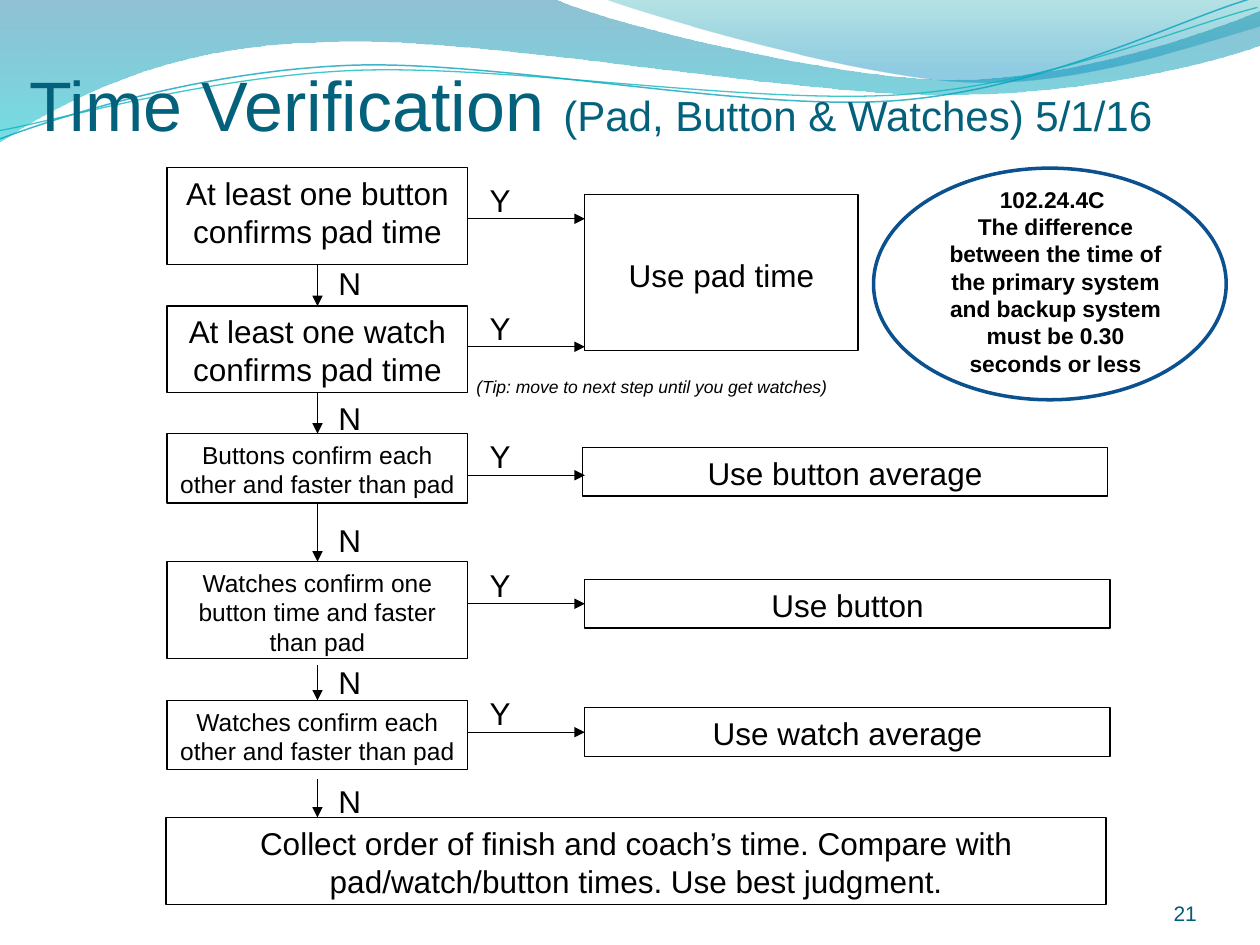
import pptx
import pptx.util
import pptx.dml.color
import pptx.enum.shapes
import pptx.enum.text
import pptx.oxml.ns
import lxml.etree

Cm = pptx.util.Cm
Pt = pptx.util.Pt
Shape = pptx.enum.shapes.MSO_SHAPE
Align = pptx.enum.text.PP_ALIGN
Anchor = pptx.enum.text.MSO_ANCHOR
qn = pptx.oxml.ns.qn

HUES = {
    "ink": "000000", "paper": "FFFFFF", "title": "04617B", "page": "045C75",
    "ring": "0B5190", "deep": "00739E", "aqua": "00C5CE", "teal": "009FA6",
    "sky": "008ABE", "blue": "05A0BE", "mint": "08B6BA",
}


def hue(name):
    return pptx.dml.color.RGBColor.from_string(HUES[name])


def write(frame, text, size=18, color="ink", bold=False, italic=False,
          align=Align.CENTER, anchor=Anchor.TOP, inset=0.13, wrap=True,
          append=False):
    """Fill a text frame, one paragraph a line, or append a run."""
    frame.word_wrap = wrap
    frame.vertical_anchor = anchor
    frame.margin_left = frame.margin_right = Cm(inset)
    frame.margin_top = frame.margin_bottom = Cm(inset)
    for i, part in enumerate(text.split("\n")):
        if append:
            para = frame.paragraphs[-1]
        else:
            para = frame.add_paragraph() if i else frame.paragraphs[0]
        para.alignment = align
        run = para.add_run()
        run.text = part
        font = run.font
        font.name, font.size = "Arial", Pt(size)
        font.bold, font.italic = bold, italic
        font.color.rgb = hue(color)


def bend(item, steps):
    """Turn each three line segments of a six-value step into one curve."""
    lines = iter(list(item._element.spPr.iter(qn("a:lnTo"))))
    for step in steps:
        first = next(lines)
        if len(step) == 2:
            continue
        curve = lxml.etree.Element(qn("a:cubicBezTo"))
        first.addprevious(curve)
        for line in (first, next(lines), next(lines)):
            curve.append(line[0])
            line.getparent().remove(line)


class Chart:
    """Holds the style and the current slide."""

    def __init__(self, slide, line="ink", width=0.75):
        self.slide, self.line, self.width = slide, line, width

    def text(self, x, y, w, h, words, **style):
        box = self.slide.shapes.add_textbox(Cm(x), Cm(y), Cm(w), Cm(h))
        write(box.text_frame, words, **style)
        return box

    def shape(self, kind, x, y, w, h, line=None, width=None):
        item = self.slide.shapes.add_shape(kind, Cm(x), Cm(y), Cm(w), Cm(h))
        item.shadow.inherit = False
        item.fill.background()
        item.line.color.rgb = hue(line or self.line)
        item.line.width = Pt(width or self.width)
        return item

    def box(self, x, y, w, h, words, **style):
        item = self.shape(Shape.RECTANGLE, x, y, w, h)
        write(item.text_frame, words, **style)
        return item

    def arrow(self, x1, y1, x2, y2, start=None, end=None):
        """Draw an arrow; start and end are (shape, side) joins."""
        item = self.slide.shapes.add_connector(
            pptx.enum.shapes.MSO_CONNECTOR.STRAIGHT, Cm(x1), Cm(y1), Cm(x2), Cm(y2))
        if start:
            item.begin_connect(*start)
        if end:
            item.end_connect(*end)
        item.line.color.rgb = hue(self.line)
        item.line.width = Pt(self.width)
        lxml.etree.SubElement(item.line._get_or_add_ln(), qn("a:tailEnd"), type="triangle")
        lxml.etree.SubElement(item._element.spPr, qn("a:effectLst"))

    def wave(self, start, steps, stops=None, line=None, width=None):
        """Draw a filled wave from (place, hue, alpha) stops, or a thin curve."""
        pts = [(Cm(s[k]), Cm(s[k + 1])) for s in steps for k in range(0, len(s), 2)]
        form = self.slide.shapes.build_freeform(Cm(start[0]), Cm(start[1]), scale=1.0)
        form.add_line_segments(pts, close=bool(stops))
        item = form.convert_to_shape()
        bend(item, steps)
        item.shadow.inherit = False
        if stops:
            item.line.fill.background()
            item.fill.gradient()
            item.fill.gradient_angle = 270
            for stop, (place, name, _) in zip(item.fill.gradient_stops, stops):
                stop.position = place
                stop.color.rgb = hue(name)
            fades = [stop[2] for stop in stops]
        else:
            item.fill.background()
            item.line.color.rgb = hue(line)
            item.line.width = Pt(width)
            fades = [77]
        for tint, fade in zip(item._element.spPr.iter(qn("a:srgbClr")), fades):
            lxml.etree.SubElement(tint, qn("a:alpha"), val=str(fade * 1000))


def main():
    deck = pptx.Presentation()
    deck.slide_width, deck.slide_height = Cm(25.4), Cm(19.05)
    slide = deck.slides.add_slide(deck.slide_layouts[6])
    slide.background.fill.solid()
    slide.background.fill.fore_color.rgb = hue("paper")
    chart = Chart(slide)

    # Waves along the top
    chart.wave((0, -0.02), [
        (11.18, -0.02), (12.09, 0.43, 16.87, 1.6, 19.25, 1.6),
        (21.67, 1.6, 24.33, 0.66, 25.4, 0.23), (25.42, 0.91),
        (24.97, 1.12, 22.1, 1.93, 18.95, 1.91),
        (15.8, 1.91, 9.7, 0.71, 6.53, 0.86),
        (3.28, 0.89, 1.17, 2.11, -0.02, 2.87),
    ], stops=[(0, "deep", 44), (1, "aqua", 55)])
    chart.wave((12.17, -0.02), [
        (12.93, 0.28, 17.32, 1.57, 19.53, 1.65),
        (21.74, 1.75, 24.41, 0.81, 25.4, 0.53), (25.4, 0),
    ], stops=[(0, "teal", 29), (0.8, "sky", 44)])
    chart.wave((-0.05, 2.82), [
        (1.17, 2.36, 3.96, 1.45, 6.99, 1.32),
        (9.98, 1.19, 15.01, 2.26, 18.06, 2.03),
        (21.11, 1.8, 23.77, 0.38, 25.3, -0.05),
    ], line="blue", width=0.85)
    chart.wave((-0.05, 2.64), [
        (1.14, 2.44, 4.11, 1.55, 7.14, 1.42),
        (10.19, 1.3, 15.11, 2.11, 18.16, 1.91),
        (21.18, 1.7, 23.85, 0.53, 25.35, 0.15),
    ], line="mint", width=0.75)

    # Title
    look = dict(color="title", align=Align.LEFT, anchor=Anchor.BOTTOM, inset=0)
    title = chart.text(0.6, -0.74, 23.65, 3.68, "Time Verification ", size=40, **look)
    write(title.text_frame, "(Pad, Button & Watches) 5/1/16", size=24, append=True, **look)

    # Results on the right
    pad = chart.box(11.79, 3.92, 5.51, 3.15, "Use pad time", anchor=Anchor.MIDDLE)
    pad.text_frame.margin_top = Cm(0.23)
    chart.box(11.74, 9.02, 10.59, 0.98, "Use button average")
    button = chart.box(11.79, 11.68, 10.59, 0.98, "Use button")
    watch = chart.box(11.79, 14.27, 10.59, 0.98, "Use watch average")

    # Tests: top, height, text size, words, height of yes arrow, its target
    tests = [
        (3.38, 1.96, 18, "At least one button confirms pad time", 4.41, None),
        (6.17, 1.75, 18, "At least one watch confirms pad time", 6.99, None),
        (8.74, 1.4, 14, "Buttons confirm each other and faster than pad", 9.58, None),
        (11.32, 1.96, 14, "Watches confirm one button time and faster than pad", 12.17, button),
        (14.12, 1.4, 14, "Watches confirm each other and faster than pad", 14.76, watch),
    ]
    boxes = []
    for top, high, size, words, level, goal in tests:
        boxes.append(chart.box(3.37, top, 6.06, high, words, size=size))
        chart.arrow(9.42, level, 11.79, level, end=goal and (goal, 1))
        chart.text(9.73, level - 0.89, 0.71, 0.97, "Y", wrap=False)
    chart.box(3.35, 16.48, 18.95, 1.75, "Collect order of finish and coach’s time. "
              "Compare with pad/watch/button times. Use best judgment.")

    # No arrows: start, end, top of label
    steps = [(5.34, 6.17, 5.2), (7.92, 8.74, 7.92), (10.14, 11.32, 10.37),
             (13.41, 14.12, 13.23), (15.7, 16.48, 15.64)]
    for i, (start, end, label) in enumerate(steps):
        chart.arrow(6.4, start, 6.4, end,
                    start=(boxes[i], 2) if i < 3 else None,
                    end=(boxes[i + 1], 0) if i < 4 else None)
        chart.text(6.68, label, 0.74, 0.97, "N", wrap=False)

    # Rule, tip and page number
    ring = chart.shape(Shape.OVAL, 17.61, 3.39, 7.11, 4.67, line="ring", width=2)
    ring.fill.solid()
    ring.fill.fore_color.rgb = hue("paper")
    chart.text(18.66, 3.49, 5.23, 1.96, "102.24.4C \nThe difference between the time of the "
               "primary system and backup system must be 0.30 seconds or less",
               size=13, bold=True, inset=0.25)
    chart.text(8.97, 7.37, 8.33, 1.12, "(Tip: move to next step until you get watches)",
               size=10, italic=True, inset=0.25)
    chart.text(23.62, 18.19, 0.51, 0.48, "21", size=12, color="page",
               align=Align.RIGHT, anchor=Anchor.BOTTOM, inset=0, wrap=False)

    deck.save("out.pptx")


if __name__ == "__main__":
    main()
